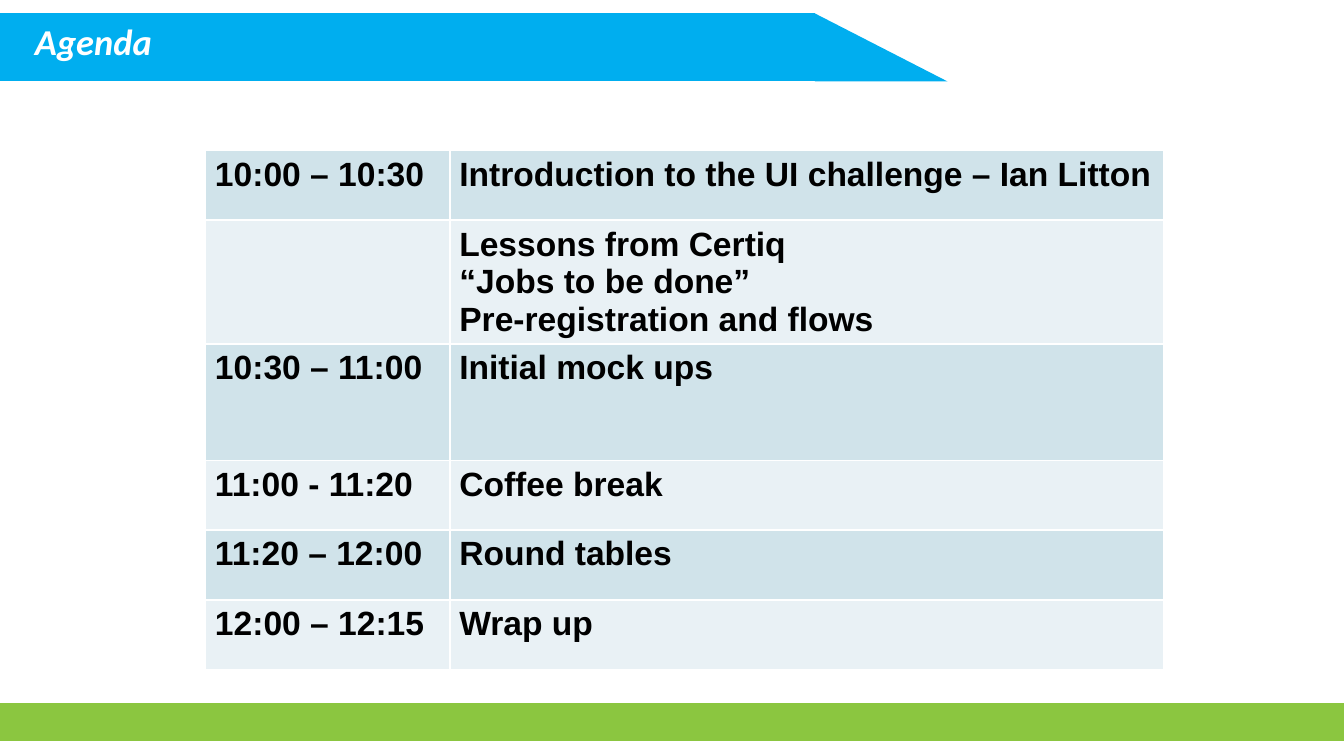
from lxml import etree
from pptx import Presentation
from pptx.dml.color import RGBColor
from pptx.enum.shapes import MSO_SHAPE
from pptx.enum.text import MSO_ANCHOR, PP_ALIGN
from pptx.oxml.ns import qn
from pptx.util import Inches, Pt

PROCESS = MSO_SHAPE.FLOWCHART_PROCESS
TRIANGLE = MSO_SHAPE.ISOSCELES_TRIANGLE
MIDDLE, TOP = MSO_ANCHOR.MIDDLE, MSO_ANCHOR.TOP
LEFT = PP_ALIGN.LEFT

WIDTH = 10
HEIGHT = WIDTH * 9 / 16
COLORS = {
    "banner": "00AEEF",
    "footer": "8BC640",
    "title": "FFFFFF",
    "text": "000000",
    "border": "FFFFFF",
    "odd": "D0E3EA",
    "even": "E9F1F5",
}
AGENDA = [
    ("10:00 – 10:30", ["Introduction to the UI challenge – Ian Litton"], 0.52),
    ("", ["Lessons from Certiq", "“Jobs to be done”", "Pre-registration and flows"], 0.87),
    ("10:30 – 11:00", ["Initial mock ups"], 0.87),
    ("11:00 - 11:20", ["Coffee break"], 0.52),
    ("11:20 – 12:00", ["Round tables"], 0.52),
    ("12:00 – 12:15", ["Wrap up"], 0.52),
]
TIME_SHARE = 0.255


def rgb(name):
    return RGBColor.from_string(COLORS[name])


def set_font(font, name, size, color, italic=False):
    font.name = name
    font.size = Pt(size)
    font.bold = True
    font.italic = italic
    font.color.rgb = rgb(color)


def add_block(shapes, kind, box, color):
    sp = shapes.add_shape(kind, *map(Inches, box))
    sp.shadow.inherit = False
    sp.fill.solid()
    sp.fill.fore_color.rgb = rgb(color)
    sp.line.fill.background()
    return sp


def add_banner(slide, box):
    x, y, w, h = box
    bar = 0.86 * w
    group = slide.shapes.add_group_shape()
    add_block(group.shapes, PROCESS, (x, y, bar, h), "banner")
    tip = add_block(group.shapes, TRIANGLE, (x + bar, y, w - bar, h), "banner")
    tip.adjustments[0] = 0


def place_title(slide, text, box):
    sp = slide.shapes.title
    sp.left, sp.top, sp.width, sp.height = map(Inches, box)
    tf = sp.text_frame
    tf.text = text
    tf.word_wrap = True
    tf.vertical_anchor = MIDDLE
    p = tf.paragraphs[0]
    p.alignment = LEFT
    set_font(p.font, "Calibri", 19.5, "title", italic=True)
    sp.element.getparent().append(sp.element)


def add_borders(cell):
    tcPr = cell._tc.get_or_add_tcPr()
    for i, side in enumerate(("lnL", "lnR", "lnT", "lnB")):
        ln = etree.Element(qn(f"a:{side}"), w=str(Pt(1)))
        fill = etree.SubElement(ln, qn("a:solidFill"))
        etree.SubElement(fill, qn("a:srgbClr"), val=COLORS["border"])
        tcPr.insert(i, ln)


def fill_cell(cell, lines, color):
    cell.fill.solid()
    cell.fill.fore_color.rgb = rgb(color)
    cell.margin_left = cell.margin_right = Inches(0.07)
    cell.margin_top = cell.margin_bottom = Inches(0.04)
    cell.vertical_anchor = TOP
    cell.text = "\n".join(lines)
    for p in cell.text_frame.paragraphs:
        set_font(p.font, "Arial", 18, "text")
    add_borders(cell)


def add_agenda(slide, box):
    x, y, w, h = box
    frame = slide.shapes.add_table(len(AGENDA), 2, *map(Inches, box))
    table = frame.table
    table.first_row = table.horz_banding = False
    for column, share in zip(table.columns, (TIME_SHARE, 1 - TIME_SHARE)):
        column.width = Inches(w * share)
    total = sum(height for _, _, height in AGENDA)
    for i, (time, topics, height) in enumerate(AGENDA):
        table.rows[i].height = Inches(h * height / total)
        color = "even" if i % 2 else "odd"
        fill_cell(table.cell(i, 0), [time], color)
        fill_cell(table.cell(i, 1), topics, color)


def main():
    prs = Presentation()
    prs.slide_width, prs.slide_height = Inches(WIDTH), Inches(HEIGHT)
    slide = prs.slides.add_slide(prs.slide_layouts[5])
    add_banner(slide, (0, 0.1, 0.705 * WIDTH, 0.09 * HEIGHT))
    add_block(slide.shapes, PROCESS, (0, 0.93 * HEIGHT, WIDTH, 0.05 * HEIGHT), "footer")
    place_title(slide, "Agenda", (0.16, 0.13, 0.4 * WIDTH, 0.35))
    add_agenda(slide, (1.53, 1.12, 7.13, 3.81))
    prs.save("out.pptx")


if __name__ == "__main__":
    main()
